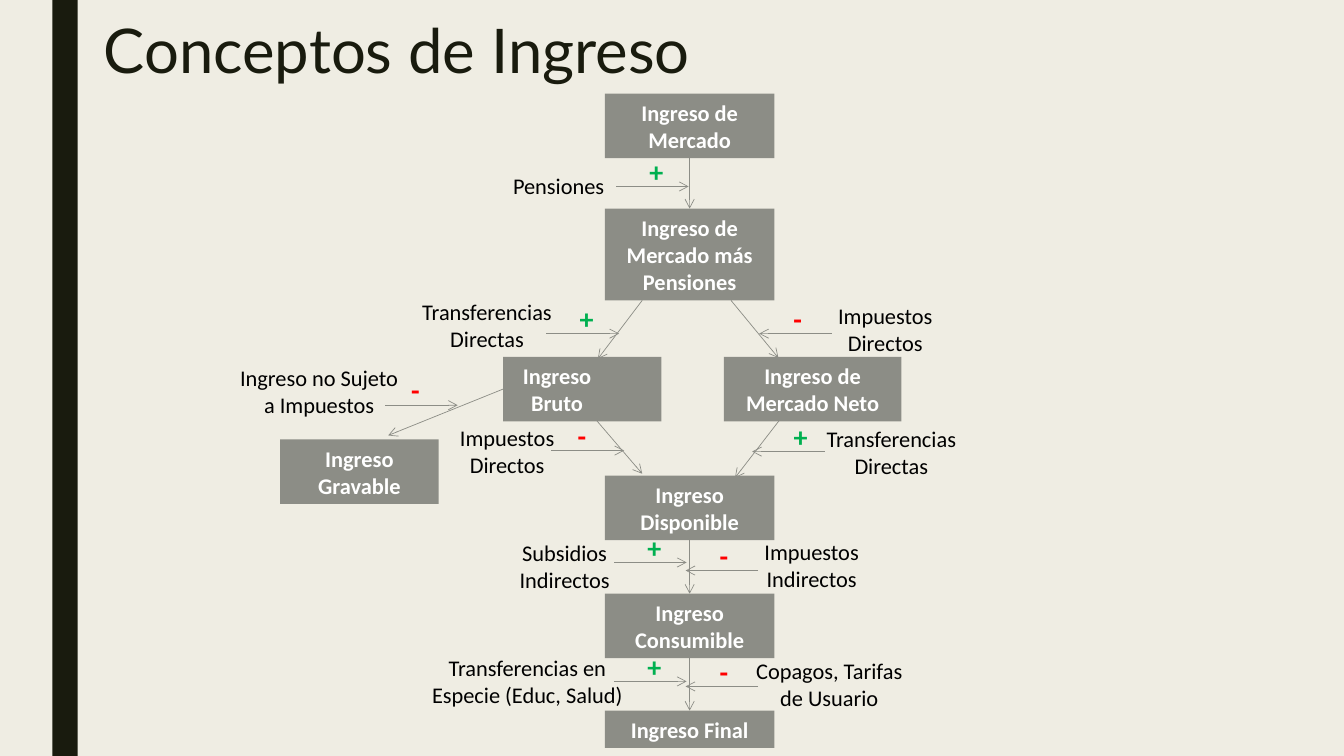
from dataclasses import dataclass

from lxml import etree
from pptx import Presentation
from pptx.dml.color import RGBColor
from pptx.enum.shapes import MSO_CONNECTOR, MSO_SHAPE
from pptx.enum.text import MSO_ANCHOR, PP_ALIGN
from pptx.oxml.ns import qn
from pptx.util import Inches, Pt

RECTANGLE = MSO_SHAPE.RECTANGLE
STRAIGHT = MSO_CONNECTOR.STRAIGHT
LEFT, CENTER = PP_ALIGN.LEFT, PP_ALIGN.CENTER
TOP, MIDDLE = MSO_ANCHOR.TOP, MSO_ANCHOR.MIDDLE
SIDE_TOP, SIDE_LEFT, SIDE_BOTTOM = 0, 1, 2


@dataclass(frozen=True)
class Theme:
    background: RGBColor = RGBColor(0xEF, 0xED, 0xE3)
    dark: RGBColor = RGBColor(0x19, 0x1B, 0x0E)
    gray: RGBColor = RGBColor(0x8C, 0x8D, 0x86)
    white: RGBColor = RGBColor(0xFF, 0xFF, 0xFF)
    black: RGBColor = RGBColor(0, 0, 0)
    green: RGBColor = RGBColor(0x00, 0xB0, 0x50)
    red: RGBColor = RGBColor(0xFF, 0, 0)
    title_font: str = "Lato"
    body_font: str = "Calibri"
    title_size: Pt = Pt(44)
    body_size: Pt = Pt(16)
    sign_size: Pt = Pt(20)
    line_width: Pt = Pt(0.5)


THEME = Theme()

# Income concepts: text, left, top, width, height
CONCEPTS = {
    "market": ("Ingreso de Mercado", 6, 0.93, 1.68, 0.64),
    "pensions": ("Ingreso de Mercado más Pensiones", 6, 2.07, 1.68, 0.91),
    "gross": ("Ingreso\nBruto", 4.99, 3.54, 1.57, 0.64),
    "net": ("Ingreso de Mercado Neto", 7.18, 3.54, 1.76, 0.64),
    "taxable": ("Ingreso Gravable", 2.78, 4.36, 1.57, 0.64),
    "disposable": ("Ingreso Disponible", 6, 4.72, 1.68, 0.64),
    "consumable": ("Ingreso Consumible", 6, 5.89, 1.68, 0.64),
    "final": ("Ingreso Final", 6, 7.05, 1.68, 0.37),
}

VERTICAL_FLOWS = [
    ("market", "pensions"),
    ("disposable", "consumable"),
    ("consumable", "final"),
]

# Start x, start y, end x, end y
DIAGONAL_FLOWS = [
    (6.37, 2.98, 5.93, 3.56),
    (7.25, 2.98, 7.72, 3.55),
    (7.73, 4.17, 7.29, 4.74),
    (5.89, 4.14, 6.37, 4.7),
]

# Text, left, top, width, sign, arrow start x, arrow y, arrow direction
ADJUSTMENTS = [
    ("Transferencias Directas", 4.07, 2.91, 1.52, "+", 5.42, 3.31, 1),
    ("Impuestos Directos", 8.02, 2.95, 1.52, "-", 8.25, 3.31, -1),
    ("Ingreso no Sujeto a Impuestos", 2.22, 3.56, 1.89, "-", 3.82, 4.02, 1),
    ("Impuestos Directos", 4.27, 4.16, 1.52, "-", 5.47, 4.47, 1),
    ("Transferencias Directas", 8.08, 4.17, 1.52, "+", 8.18, 4.48, -1),
    ("Subsidios Indirectos", 4.84, 5.3, 1.52, "+", 6.09, 5.58, 1),
    ("Impuestos Indirectos", 7.29, 5.29, 1.52, "-", 7.52, 5.66, -1),
    ("Transferencias en Especie (Educ, Salud)", 4.11, 6.44, 2.24, "+", 6.09, 6.76, 1),
    ("Copagos, Tarifas de Usuario", 7.28, 6.47, 1.89, "-", 7.52, 6.81, -1),
]
ARROW_LENGTH = 0.72
SIGN_RISE = 0.37
# Sign: offset from the arrow's left end, width, colour
SIGNS = {"+": (0.33, 0.05, THEME.green), "-": (0.16, 0.23, THEME.red)}


def write(shape, text, size, color, font=THEME.body_font, bold=False,
          align=CENTER, anchor=TOP, wrap=True):
    frame = shape.text_frame
    frame.word_wrap = wrap
    frame.vertical_anchor = anchor
    frame.text = text
    for paragraph in frame.paragraphs:
        paragraph.alignment = align
        paragraph.font.name = font
        paragraph.font.size = size
        paragraph.font.bold = bold
        paragraph.font.color.rgb = color
    return frame


def add_text(slide, text, left, top, width, height, size, color, **style):
    box = slide.shapes.add_textbox(
        Inches(left), Inches(top), Inches(width), Inches(height))
    return write(box, text, size, color, **style)


def add_rectangle(slide, left, top, width, height, color):
    shape = slide.shapes.add_shape(
        RECTANGLE, Inches(left), Inches(top), Inches(width), Inches(height))
    shape.shadow.inherit = False
    shape.fill.solid()
    shape.fill.fore_color.rgb = color
    shape.line.fill.background()
    return shape


def add_concept(slide, text, left, top, width, height):
    shape = add_rectangle(slide, left, top, width, height, THEME.gray)
    write(shape, text, THEME.body_size, THEME.white, bold=True, anchor=MIDDLE)
    return shape


def add_arrow(slide, start_x, start_y, end_x, end_y):
    arrow = slide.shapes.add_connector(
        STRAIGHT, Inches(start_x), Inches(start_y), Inches(end_x), Inches(end_y))
    arrow.line.color.rgb = THEME.gray
    arrow.line.width = THEME.line_width
    properties = arrow.line._get_or_add_ln()
    etree.SubElement(properties, qn("a:tailEnd"), type="arrow")
    etree.SubElement(arrow._element.spPr, qn("a:effectLst"))
    return arrow


def add_sign_arrow(slide, sign, start_x, y, direction):
    """Draw a horizontal arrow (direction 1 right, -1 left) with its sign above."""
    end_x = start_x + direction * ARROW_LENGTH
    add_arrow(slide, start_x, y, end_x, y)
    offset, width, color = SIGNS[sign]
    if direction < 0:
        offset += 0.08
    add_text(slide, sign, min(start_x, end_x) + offset, y - SIGN_RISE, width, 0.44,
             THEME.sign_size, color, bold=True, wrap=False)


def add_adjustment(slide, text, left, top, width, *sign_arrow):
    add_text(slide, text, left, top, width, 0.64, THEME.body_size, THEME.black)
    add_sign_arrow(slide, *sign_arrow)


def main():
    presentation = Presentation()
    presentation.slide_width = Inches(13.33)
    presentation.slide_height = Inches(7.5)
    slide = presentation.slides.add_slide(presentation.slide_layouts[6])
    slide.background.fill.solid()
    slide.background.fill.fore_color.rgb = THEME.background

    add_rectangle(slide, 0.52, 0, 0.25, 7.5, THEME.dark)
    title = add_text(slide, "Conceptos de Ingreso", 0.93, 0.16, 10.5, 1.62,
                     THEME.title_size, THEME.dark, font=THEME.title_font, align=LEFT)
    title.paragraphs[0].line_spacing = 0.89

    concepts = {name: add_concept(slide, *values) for name, values in CONCEPTS.items()}
    # The first line of this box sits left of centre
    first_line = concepts["gross"].text_frame.paragraphs[0]
    first_line._p.get_or_add_pPr().set("marR", str(Inches(0.5)))

    for source, target in VERTICAL_FLOWS:
        arrow = add_arrow(slide, 0, 0, 0, 0)
        arrow.begin_connect(concepts[source], SIDE_BOTTOM)
        arrow.end_connect(concepts[target], SIDE_TOP)
    taxable_flow = add_arrow(slide, 4.99, 3.86, 3.85, 4.32)
    taxable_flow.begin_connect(concepts["gross"], SIDE_LEFT)
    for flow in DIAGONAL_FLOWS:
        add_arrow(slide, *flow)

    add_text(slide, "Pensiones", 4.99, 1.66, 1.93, 0.37,
             THEME.body_size, THEME.black, align=LEFT)
    add_sign_arrow(slide, "+", 6.11, 1.85, 1)
    for adjustment in ADJUSTMENTS:
        add_adjustment(slide, *adjustment)

    presentation.save("out.pptx")


if __name__ == "__main__":
    main()
